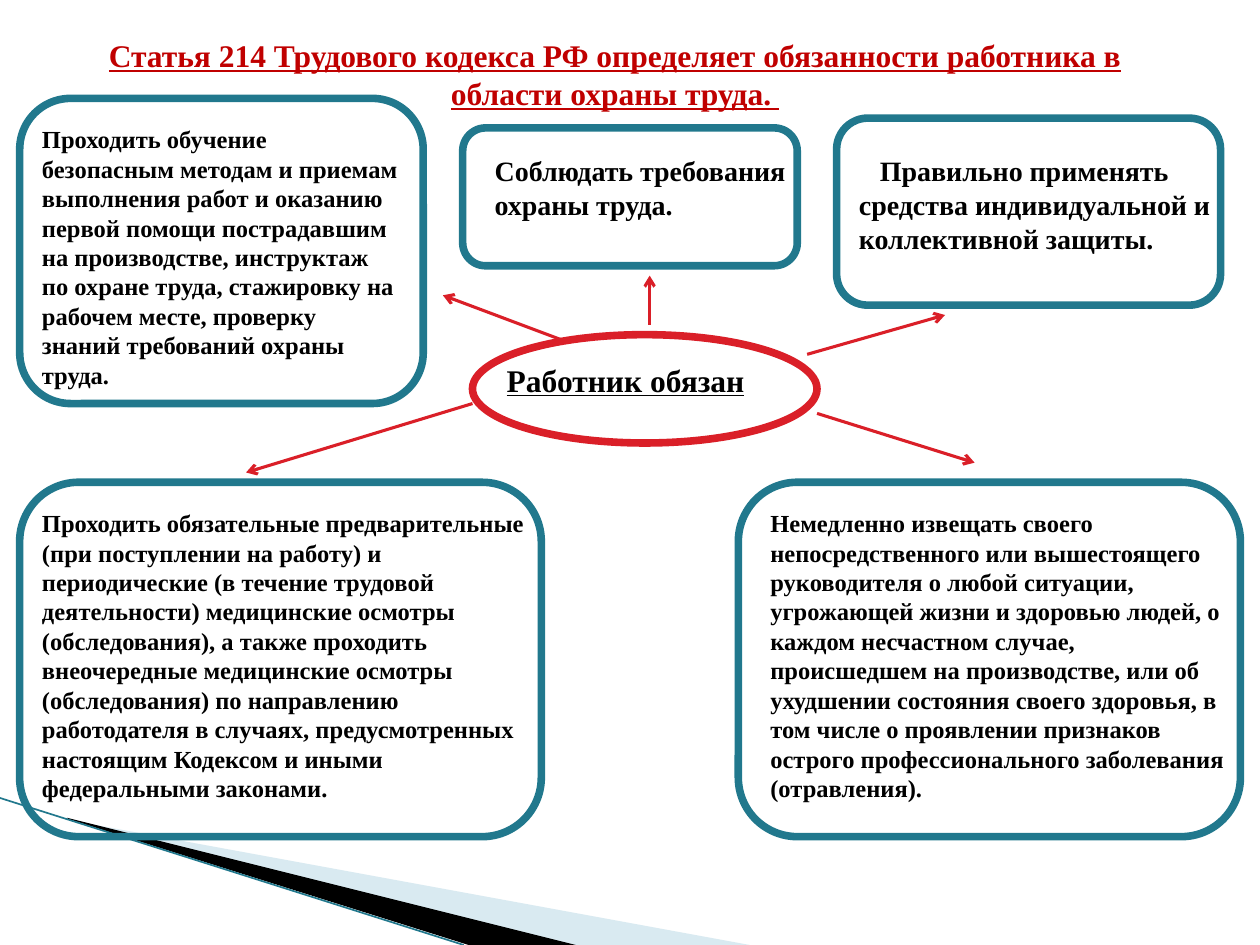
from dataclasses import dataclass

from lxml.etree import SubElement
from pptx import Presentation
from pptx.dml.color import RGBColor
from pptx.enum.shapes import MSO_CONNECTOR, MSO_SHAPE
from pptx.enum.text import MSO_ANCHOR, PP_ALIGN
from pptx.oxml.ns import qn
from pptx.util import Pt


@dataclass(frozen=True)
class Theme:
    font: str = "Times New Roman"
    ink: str = "000000"
    heading: str = "C00000"
    frame: str = "21788D"
    accent: str = "DA1F28"
    pale: str = "A0CBDC"
    heading_size: float = 18
    short_size: float = 16
    long_size: float = 14
    frame_width: float = 4.33
    arrow_width: float = 1.75
    edge_width: float = 0.95


THEME = Theme()

HEADING = (
    "Статья 214 Трудового кодекса РФ определяет обязанности работника "
    "в области охраны труда. "
)
HEADING_BOX = (22.5, 16.9, 658, 51)
CENTRE = "Работник обязан"
CENTRE_BOX = (281.5, 202.5, 152, 29)
CENTRE_OVAL = (270, 191.25, 196.9, 61.9)

DUTIES = [
    {
        "text": "Соблюдать требования охраны труда.",
        "size": THEME.short_size,
        "text_box": (275.6, 84.4, 196.9, 46),
        "frame": (264.4, 73.1, 191.2, 78.8),
    },
    {
        "text": "Правильно применять средства индивидуальной и "
                "коллективной защиты.",
        "size": THEME.short_size,
        "indent": 12,
        "text_box": (483.75, 84.4, 225, 65.4),
        "frame": (478.1, 67.5, 219.4, 106.9),
    },
    {
        "text": "Немедленно извещать своего непосредственного или вышестоящего "
                "руководителя о любой ситуации, угрожающей жизни и здоровью людей, "
                "о каждом несчастном случае, происшедшем на производстве, или об "
                "ухудшении состояния своего здоровья, в том числе о проявлении "
                "признаков острого профессионального заболевания (отравления).",
        "size": THEME.long_size,
        "text_box": (433.1, 286.9, 276, 177),
        "frame": (421.9, 275.6, 286.9, 202.5),
    },
    {
        "text": "Проходить обязательные предварительные (при поступлении на "
                "работу) и периодические (в течение трудовой деятельности) "
                "медицинские осмотры (обследования), а также проходить "
                "внеочередные медицинские осмотры (обследования) по направлению "
                "работодателя в случаях, предусмотренных настоящим Кодексом и "
                "иными федеральными законами.",
        "size": THEME.long_size,
        "text_box": (16.9, 286.9, 292.5, 177),
        "frame": (11.25, 275.6, 298.1, 202.5),
    },
    {
        "text": "Проходить обучение безопасным методам и приемам выполнения "
                "работ и оказанию первой помощи пострадавшим на производстве, "
                "инструктаж по охране труда, стажировку на рабочем месте, "
                "проверку знаний требований охраны труда.",
        "size": THEME.long_size,
        "text_box": (16.9, 67.5, 219.4, 160),
        "frame": (11.25, 56.25, 230.6, 174.4),
    },
]

ARROWS = [
    ((466.9, 236.25), (556.9, 264.4)),
    ((270, 230.6), (140.6, 270)),
    ((461.25, 202.5), (540, 180)),
    ((320.6, 194.1), (253.1, 168.75)),
    ((371.25, 185.6), (371.25, 157.5)),
]

PALE_WEDGE = [(39.6, 468.7), (428.4, 540), (328.3, 540), (39.6, 468)]
DARK_WEDGE = [(38.2, 467.3), (329, 540), (267.8, 540), (38.9, 468)]
EDGE = ((0, 456), (265, 540))


def rgb(value):
    return RGBColor.from_string(value)


def points(values):
    return [Pt(value) for value in values]


def write(shape, text, size, color=THEME.ink, align=PP_ALIGN.LEFT,
          underline=False, wrap=True, indent=0):
    frame = shape.text_frame
    frame.word_wrap = wrap
    frame.vertical_anchor = MSO_ANCHOR.TOP
    paragraph = frame.paragraphs[0]
    paragraph.text = text
    paragraph.alignment = align
    if indent:
        paragraph._p.get_or_add_pPr().set("indent", str(Pt(indent)))
    font = paragraph.font
    font.name, font.size = THEME.font, Pt(size)
    font.bold, font.underline = True, underline
    font.color.rgb = rgb(color)


def add_wedge(shapes, outline, color, alpha=None):
    start, *rest = [points(point) for point in outline]
    builder = shapes.build_freeform(*start, scale=1.0)
    builder.add_line_segments(rest, close=True)
    wedge = builder.convert_to_shape()
    wedge.shadow.inherit = False
    wedge.fill.solid()
    wedge.fill.fore_color.rgb = rgb(color)
    wedge.line.fill.background()
    if alpha:
        tint = wedge._element.spPr.find(".//" + qn("a:srgbClr"))
        SubElement(tint, qn("a:alpha"), val=str(alpha * 1000))


def add_outline(shapes, kind, box, color):
    outline = shapes.add_shape(kind, *points(box))
    outline.shadow.inherit = False
    outline.fill.background()
    outline.line.color.rgb = rgb(color)
    outline.line.width = Pt(THEME.frame_width)


def add_line(shapes, start, end, color, width, arrow=False):
    line = shapes.add_connector(MSO_CONNECTOR.STRAIGHT, *points(start + end))
    line.line.color.rgb = rgb(color)
    line.line.width = Pt(width)
    properties = line._element.spPr
    if arrow:
        SubElement(properties.find(qn("a:ln")), qn("a:tailEnd"), type="arrow")
    SubElement(properties, qn("a:effectLst"))


def main():
    deck = Presentation()
    deck.slide_width, deck.slide_height = Pt(720), Pt(540)
    slide = deck.slides.add_slide(deck.slide_layouts[5])
    shapes = slide.shapes

    heading = shapes.title
    heading.left, heading.top, heading.width, heading.height = points(HEADING_BOX)
    write(heading, HEADING, THEME.heading_size, THEME.heading,
          PP_ALIGN.CENTER, underline=True)

    add_wedge(shapes, PALE_WEDGE, THEME.pale, alpha=40)
    add_wedge(shapes, DARK_WEDGE, THEME.ink)
    add_line(shapes, *EDGE, THEME.frame, THEME.edge_width)

    write(shapes.add_textbox(*points(CENTRE_BOX)), CENTRE, THEME.heading_size,
          align=PP_ALIGN.CENTER, underline=True, wrap=False)
    for duty in DUTIES:
        write(shapes.add_textbox(*points(duty["text_box"])), duty["text"],
              duty["size"], indent=duty.get("indent", 0))
    for duty in DUTIES:
        add_outline(shapes, MSO_SHAPE.ROUNDED_RECTANGLE, duty["frame"], THEME.frame)
    add_outline(shapes, MSO_SHAPE.OVAL, CENTRE_OVAL, THEME.accent)
    for start, end in ARROWS:
        add_line(shapes, start, end, THEME.accent, THEME.arrow_width, arrow=True)

    deck.save("out.pptx")


if __name__ == "__main__":
    main()
